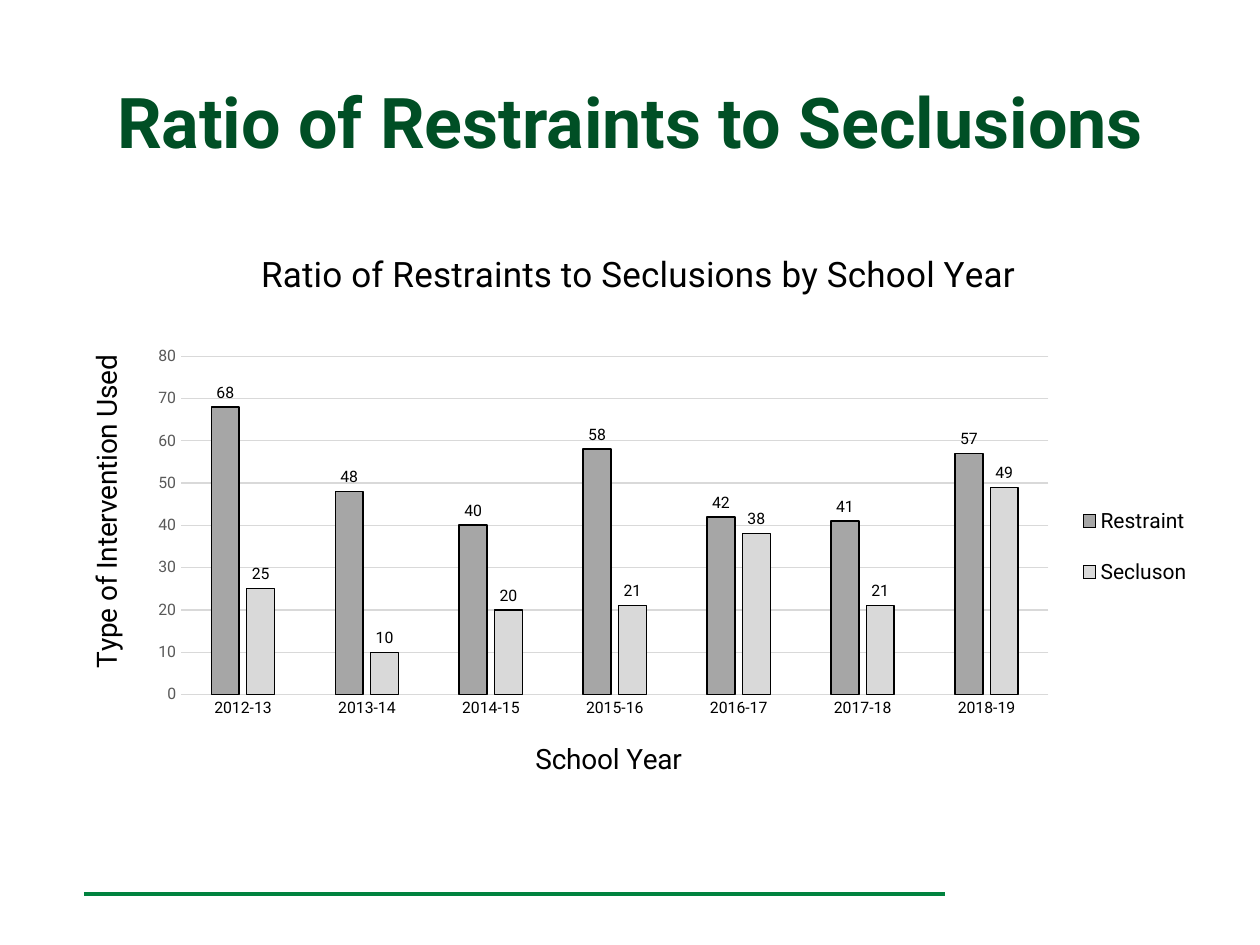
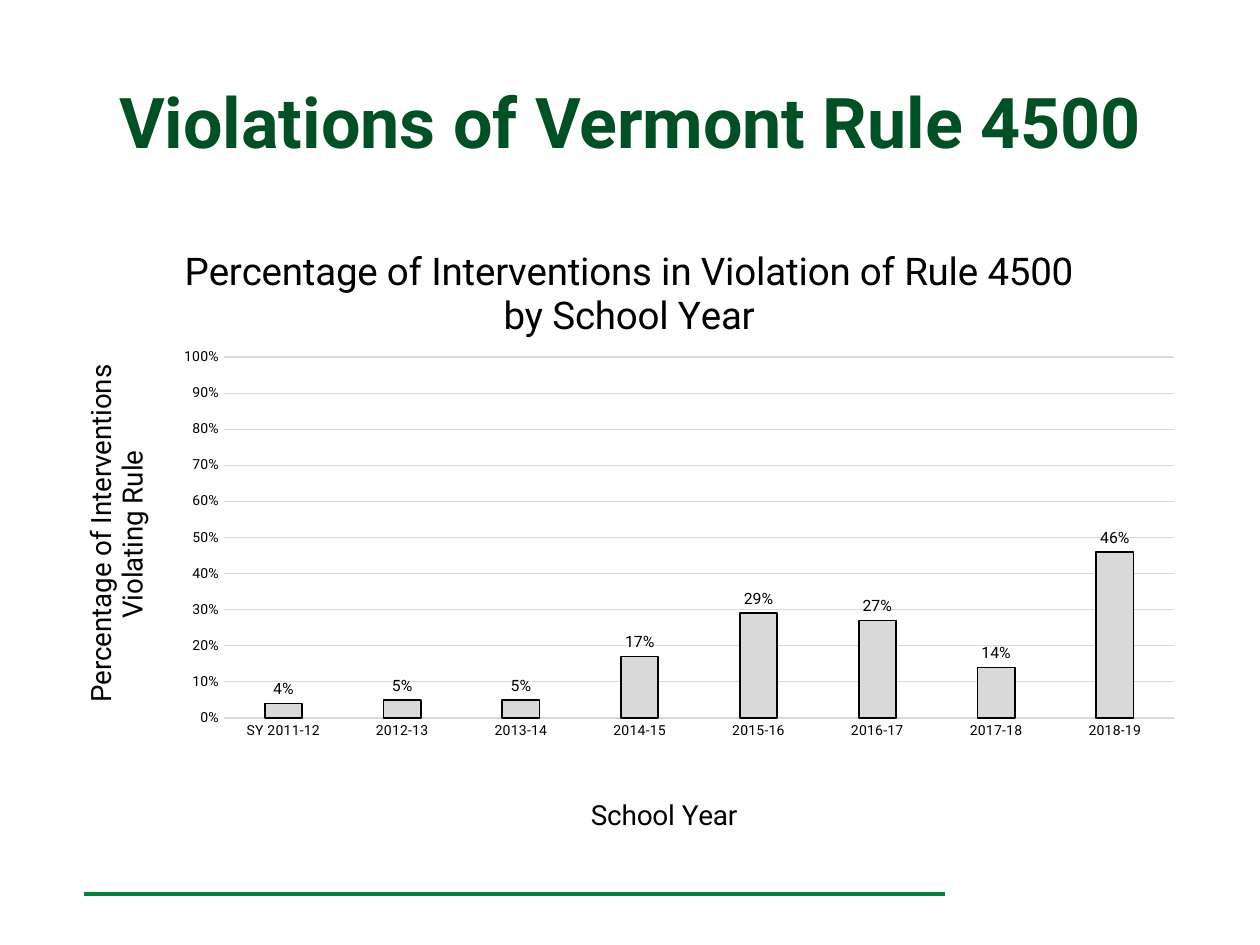
from lxml import etree
from pptx import Presentation
from pptx.chart.data import CategoryChartData
from pptx.dml.color import RGBColor
from pptx.enum.chart import (XL_CHART_TYPE, XL_LABEL_POSITION,
                             XL_LEGEND_POSITION, XL_TICK_MARK)
from pptx.enum.shapes import MSO_CONNECTOR
from pptx.enum.text import MSO_ANCHOR, PP_ALIGN
from pptx.oxml.ns import qn
from pptx.util import Pt

COLUMN = XL_CHART_TYPE.COLUMN_CLUSTERED
OUTSIDE = XL_LABEL_POSITION.OUTSIDE_END
RIGHT = XL_LEGEND_POSITION.RIGHT
NO_TICK = XL_TICK_MARK.NONE
STRAIGHT = MSO_CONNECTOR.STRAIGHT
MIDDLE = MSO_ANCHOR.MIDDLE
CENTER = PP_ALIGN.CENTER

DARK = RGBColor(0x00, 0x4F, 0x25)
GREEN = RGBColor(0x00, 0x82, 0x3E)
BLACK = RGBColor(0x00, 0x00, 0x00)
GRAY = RGBColor(0x59, 0x59, 0x59)
MID = RGBColor(0xA6, 0xA6, 0xA6)
LIGHT = RGBColor(0xD9, 0xD9, 0xD9)
FACE = "Roboto"


class Deck:
    """Holds the style and the current slide."""

    def __init__(self):
        self.prs = Presentation()
        self.prs.slide_width, self.prs.slide_height = Pt(720), Pt(540)
        self.slide = None

    def style(self, font, size, color=BLACK, bold=False):
        font.name, font.size, font.bold = FACE, Pt(size), bold
        font.color.rgb = color

    def text(self, frame, lines, size, color=BLACK, bold=False):
        for i, line in enumerate(lines):
            para = frame.add_paragraph() if i else frame.paragraphs[0]
            para.alignment = CENTER
            run = para.add_run()
            run.text = line
            self.style(run.font, size, color, bold)

    def start(self, title):
        self.slide = self.prs.slides.add_slide(self.prs.slide_layouts[5])
        box = self.slide.shapes.title
        box.left, box.top, box.width, box.height = Pt(36), Pt(24), Pt(648), Pt(90)
        box.text_frame.vertical_anchor = MIDDLE
        self.text(box.text_frame, [title], 40, DARK, True)
        self.rule()

    def rule(self):
        line = self.slide.shapes.add_connector(
            STRAIGHT, Pt(48), Pt(511), Pt(540), Pt(511))
        line.line.color.rgb, line.line.width = GREEN, Pt(2.25)
        props = line.element.find(qn("p:spPr"))
        etree.SubElement(props, qn("a:effectLst"))

    def place(self, part, index, spot, inner=False):
        """Fix a chart part at percentages (x, y, w, h) of the chart."""
        for old in part.findall(qn("c:layout")):
            part.remove(old)
        layout = etree.Element(qn("c:layout"))
        manual = etree.SubElement(layout, qn("c:manualLayout"))
        items = [("layoutTarget", "inner")] if inner else []
        items += [("xMode", "edge"), ("yMode", "edge")]
        items += [(tag, round(val / 100, 4)) for tag, val in zip("xywh", spot)]
        for tag, val in items:
            etree.SubElement(manual, qn("c:" + tag)).set("val", str(val))
        part.insert(index, layout)

    def label(self, title, lines, size, spot, turn=False):
        self.text(title.text_frame, lines, size)
        if turn:
            body = title.element.find(".//" + qn("a:bodyPr"))
            body.set("rot", "-5400000")
            body.set("vert", "horz")
        self.place(title.element, 1, spot)

    def chart(self, box, cats, series, form, plot):
        data = CategoryChartData(number_format=form)
        data.categories = cats
        for name, vals, _, _ in series:
            data.add_series(name, vals)
        frame = self.slide.shapes.add_chart(COLUMN, *map(Pt, box), data)
        chart = frame.chart
        self.style(chart.font, 10)
        chart.has_legend = False
        bars = chart.plots[0]
        bars.gap_width, bars.overlap = 219, -27
        bars.vary_by_categories = False
        for bar, (_, _, fill, width) in zip(bars.series, series):
            bar.format.fill.solid()
            bar.format.fill.fore_color.rgb = fill
            bar.format.line.color.rgb = BLACK
            bar.format.line.width = Pt(width)
            tags = bar.data_labels
            tags.show_value, tags.position = True, OUTSIDE
            tags.number_format, tags.number_format_is_linked = form, False
            self.style(tags.font, 9)
        self.place(chart.element.find(".//" + qn("c:plotArea")), 0, plot, True)
        return chart

    def axes(self, chart, size, top, step, form, color):
        cat, val = chart.category_axis, chart.value_axis
        for axis, tint in ((cat, BLACK), (val, color)):
            axis.major_tick_mark = axis.minor_tick_mark = NO_TICK
            self.style(axis.tick_labels.font, size, tint)
        val.minimum_scale, val.maximum_scale, val.major_unit = 0, top, step
        val.tick_labels.number_format = form
        val.tick_labels.number_format_is_linked = False
        val.has_major_gridlines = True
        val.format.line.fill.background()
        for line in (cat.format.line, val.major_gridlines.format.line):
            line.color.rgb, line.width = LIGHT, Pt(0.75)

    def names(self, chart, head, size, side, spots):
        """Set the chart title and both axis titles."""
        chart.has_title = True
        self.label(chart.chart_title, head, size, spots[0])
        self.label(chart.category_axis.axis_title, ["School Year"], 16, spots[1])
        self.label(chart.value_axis.axis_title, side, 16, spots[2], True)

    def legend(self, chart, spot):
        chart.has_legend = True
        chart.legend.position = RIGHT
        chart.legend.include_in_layout = False
        self.style(chart.legend.font, 12)
        self.place(chart.element.find(".//" + qn("c:legend")), 1, spot)


def main():
    deck = Deck()
    years = [f"{y}-{y - 1999}" for y in range(2012, 2019)]

    # Restraints and seclusions
    deck.start("Ratio of Restraints to Seclusions")
    chart = deck.chart(
        (36.75, 126, 648, 330), years,
        [("Restraint", (68, 48, 40, 58, 42, 41, 57), MID, 1),
         ("Secluson", (25, 10, 20, 21, 38, 21, 49), LIGHT, 0.75)],
        "General", (10.3, 23.5, 76.5, 58.6))
    deck.axes(chart, 9, 80, 10, "General", GRAY)
    deck.names(chart, ["Ratio of Restraints to Seclusions by School Year"], 20,
               ["Type of Intervention Used"],
               [(16.8, 4.1), (41.1, 89.3), (1.7, 22.4)])
    deck.legend(chart, (89, 45.4, 10.8, 22.2))

    # Rule violations
    deck.start("Violations of Vermont Rule 4500")
    chart = deck.chart(
        (36, 126, 648, 354), ["SY 2011-12"] + years,
        [("Series 1", (0.04, 0.05, 0.05, 0.17, 0.29, 0.27, 0.14, 0.46),
          LIGHT, 1)],
        "0%", (14.2, 22.3, 83.8, 58.9))
    deck.axes(chart, 8, 1, 0.1, "0%", BLACK)
    deck.names(chart, ["Percentage of Interventions in Violation of Rule 4500",
                       "by School Year"], 22,
               ["Percentage of Interventions", "Violating Rule"],
               [(10.4, 3.8), (46.1, 93.3), (1.5, 23.5)])

    deck.prs.save("out.pptx")


if __name__ == "__main__":
    main()
